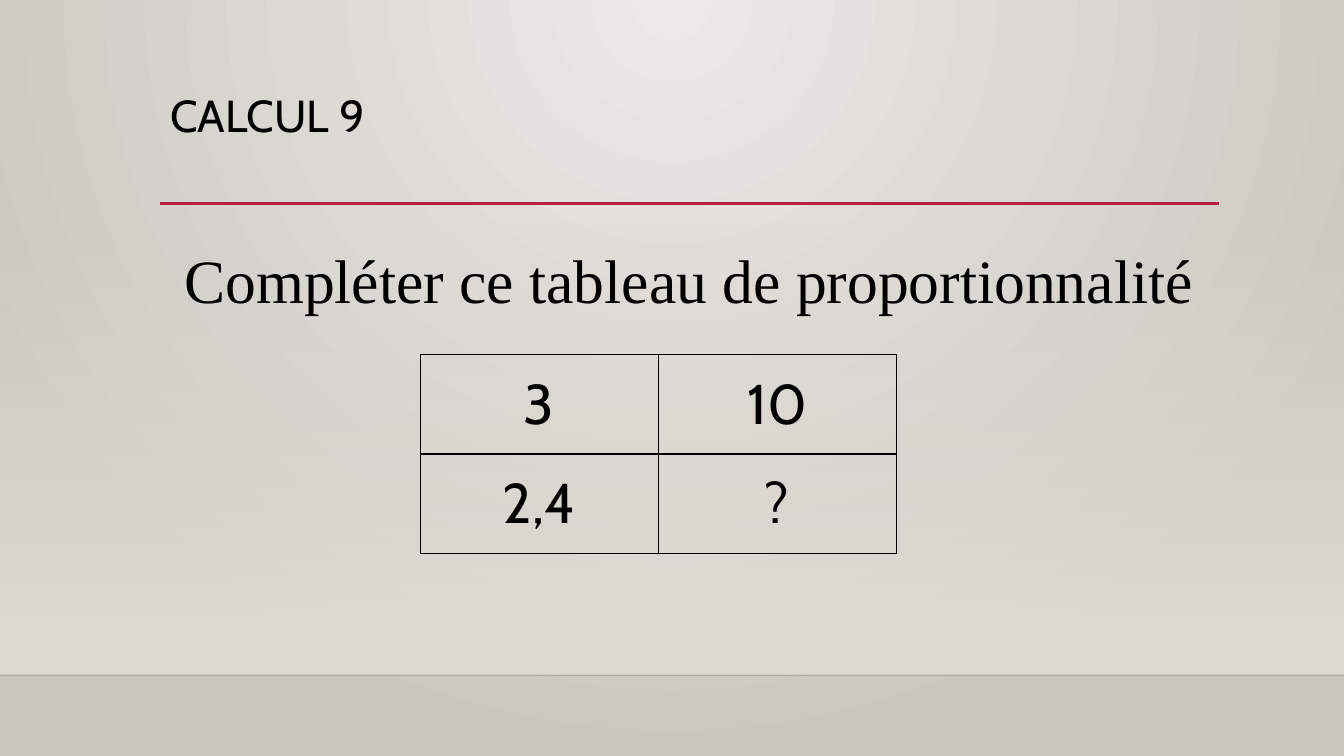
from pptx import Presentation
from pptx.dml.color import RGBColor
from pptx.enum.shapes import MSO_CONNECTOR as CONN, MSO_SHAPE as SHAPE
from pptx.enum.text import MSO_ANCHOR as ANCHOR, MSO_AUTO_SIZE as AUTO, PP_ALIGN as ALIGN
from pptx.oxml import parse_xml
from pptx.oxml.ns import nsdecls
from pptx.util import Pt

NS = nsdecls("a", "p")
BLACK = "000000"
RED = "B71E42"
WIDTH, HEIGHT = 960, 540
FLOOR_Y = 482.4


def rgb(hex_color):
    return RGBColor.from_string(hex_color)


def box(x, y, w, h):
    return Pt(x), Pt(y), Pt(w), Pt(h)


def grad_xml(stops, direction):
    """Gradient fill; stops are (position %, colour, opacity %)."""
    gs = "".join(
        f'<a:gs pos="{pos * 1000}"><a:srgbClr val="{color}">'
        f'<a:alpha val="{alpha * 1000}"/></a:srgbClr></a:gs>'
        for pos, color, alpha in stops)
    return f'<a:gradFill {NS} rotWithShape="1"><a:gsLst>{gs}</a:gsLst>{direction}</a:gradFill>'


def set_background(s):
    direction = ('<a:path path="circle"><a:fillToRect l="43000" t="0" '
                 'r="43000" b="100000"/></a:path>')
    fill = grad_xml([(0, "ECEAE7", 100), (100, "CAC7C1", 100)], direction)
    s.element.cSld.insert(0, parse_xml(
        f'<p:bg {NS}><p:bgPr>{fill}<a:effectLst/></p:bgPr></p:bg>'))


def add_wall(s):
    sp = s.shapes.add_shape(SHAPE.RECTANGLE, *box(0, 159, WIDTH, FLOOR_Y - 159))
    sp.shadow.inherit = False
    sp.line.fill.background()
    fill = grad_xml([(0, "DFDBD5", 0), (100, "DFDBD5", 100)],
                    '<a:lin ang="5400000" scaled="0"/>')
    sp.element.spPr.prstGeom.addnext(parse_xml(fill))


def add_rule(s, x1, x2, y, color, width, opacity=100):
    line = s.shapes.add_connector(CONN.STRAIGHT, Pt(x1), Pt(y), Pt(x2), Pt(y))
    line.line.color.rgb = rgb(color)
    line.line.width = Pt(width)
    spPr = line.element.spPr
    spPr.append(parse_xml(f'<a:effectLst {NS}/>'))
    if opacity < 100:
        clr = spPr.find(".//{*}srgbClr")
        clr.append(parse_xml(f'<a:alpha {NS} val="{opacity * 1000}"/>'))


def write(tf, text, font, size, align, spacing=1.0):
    p = tf.paragraphs[0]
    p.alignment = align
    p.line_spacing = spacing
    p.space_before = Pt(0)
    r = p.add_run()
    r.text = text
    for name, value in {"name": font, "size": Pt(size), "bold": False}.items():
        setattr(r.font, name, value)
    r.font.color.rgb = rgb(BLACK)


def format_frame(tf):
    settings = {"word_wrap": True, "auto_size": AUTO.NONE, "vertical_anchor": ANCHOR.TOP}
    for name, value in settings.items():
        setattr(tf, name, value)


def add_title(s, text):
    title = s.shapes.title
    title.left, title.top, title.width, title.height = box(114.5, 63.4, 756, 82.8)
    format_frame(title.text_frame)
    write(title.text_frame, text, "Cabin", 32, ALIGN.LEFT, 0.9)


def add_instruction(s, text):
    tf = s.shapes.add_textbox(*box(114.5, 158.4, 756, 271.4)).text_frame
    format_frame(tf)
    write(tf, text, "Times New Roman", 44, ALIGN.CENTER, 1.2)


def format_cell(cell, text):
    cell.vertical_anchor = ANCHOR.MIDDLE
    write(cell.text_frame, text, "Cabin", 40, ALIGN.CENTER)
    cell.fill.background()
    tcPr = cell._tc.get_or_add_tcPr()
    for i, side in enumerate(("lnL", "lnR", "lnT", "lnB")):
        tcPr.insert(i, parse_xml(
            f'<a:{side} {NS} w="{Pt(1)}"><a:solidFill><a:srgbClr val="{BLACK}"/>'
            f'</a:solidFill></a:{side}>'))


def add_value_table(s, rows):
    frame = s.shapes.add_table(len(rows), len(rows[0]), *box(300.2, 253.4, 340, 141.8))
    table = frame.table
    table.first_row = table.horz_banding = False
    for i, row in enumerate(rows):
        for j, text in enumerate(row):
            format_cell(table.cell(i, j), text)


def main():
    prs = Presentation()
    prs.slide_width, prs.slide_height = Pt(WIDTH), Pt(HEIGHT)
    s = prs.slides.add_slide(prs.slide_layouts[5])

    # Backdrop: wall, floor edge and title rule
    set_background(s)
    add_wall(s)
    add_rule(s, 0, WIDTH, FLOOR_Y, "000001", 1, opacity=20)
    add_rule(s, 114.5, 871, 145.4, RED, 2.5)

    # Exercise
    add_title(s, "CALCUL 9")
    add_instruction(s, "Compléter ce tableau de proportionnalité")
    add_value_table(s, [["3", "10"], ["2,4", "?"]])

    prs.save("out.pptx")


if __name__ == "__main__":
    main()
